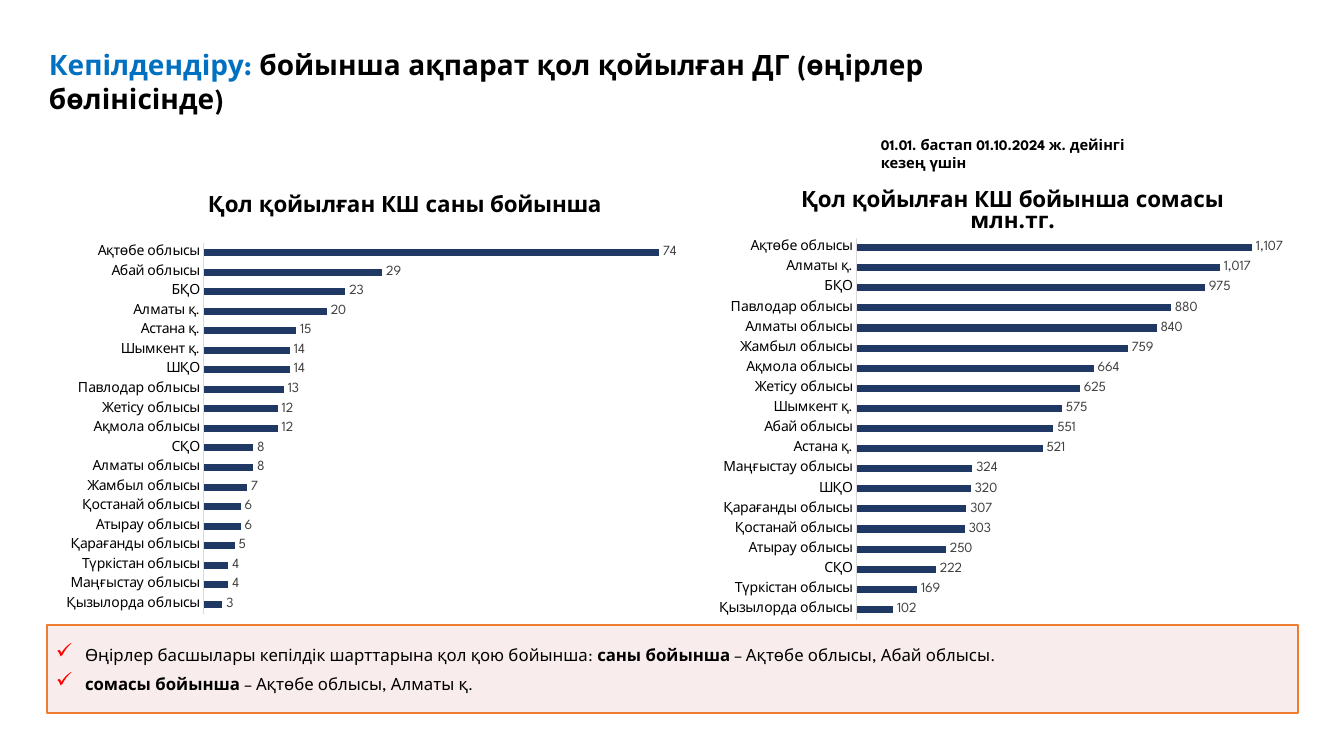
import pptx
import pptx.chart.data
import pptx.dml.color
import pptx.enum.chart
import pptx.enum.shapes
import pptx.enum.text
import pptx.oxml
import pptx.oxml.ns
import pptx.util
from lxml import etree

PX = 914400 / 100.8
FONT = "League Spartan"
COLORS = {
    "black": "000000", "blue": "0070C0", "navy": "203864", "label": "404040",
    "axis": "D9D9D9", "pink": "F2DCDB", "orange": "ED7D31", "red": "FF0000",
}
qn = pptx.oxml.ns.qn


def style_font(font, size, color, bold=None):
    font.name = FONT
    font.size = pptx.util.Pt(size)
    font.bold = bold
    font.color.rgb = pptx.dml.color.RGBColor.from_string(COLORS[color])


def set_layout(parent, index, **values):
    for old_layout in parent.findall(qn("c:layout")):
        parent.remove(old_layout)
    layout = etree.Element(qn("c:layout"))
    manual = etree.SubElement(layout, qn("c:manualLayout"))
    for tag, value in values.items():
        etree.SubElement(manual, qn(f"c:{tag}"), val=str(value))
    parent.insert(index, layout)


presentation = pptx.Presentation()
presentation.slide_width = round(1344 * PX)
presentation.slide_height = round(756 * PX)
slide = presentation.slides.add_slide(presentation.slide_layouts[6])

# Heading and period
headings = [
    ((39, 43, 921, 78), 20, [
        ("Кепілдендіру: ", "blue"),
        ("бойынша ақпарат қол қойылған ДГ (өңірлер бөлінісінде)", "black")]),
    ((871, 131, 268, 46), 10.5, [
        ("01.01. бастап 01.10.2024 ж. дейінгі кезең үшін", "black")]),
]
for box, size, pieces in headings:
    text_box = slide.shapes.add_textbox(*(round(n * PX) for n in box))
    text_box.text_frame.word_wrap = True
    paragraph = text_box.text_frame.paragraphs[0]
    for text, color in pieces:
        run = paragraph.add_run()
        run.text = text
        style_font(run.font, size, color, True)

# Summary panel
panel = slide.shapes.add_shape(
    pptx.enum.shapes.MSO_SHAPE.RECTANGLE,
    *(round(n * PX) for n in (47, 625, 1251, 88)))
panel.shadow.inherit = False
panel.fill.solid()
panel.fill.fore_color.rgb = pptx.dml.color.RGBColor.from_string(COLORS["pink"])
fill_color = panel.fill._xPr.find(".//" + qn("a:srgbClr"))
etree.SubElement(fill_color, qn("a:alpha"), val="50000")
panel.line.color.rgb = pptx.dml.color.RGBColor.from_string(COLORS["orange"])
panel.line.width = pptx.util.Pt(1)
frame = panel.text_frame
frame.word_wrap = True
frame.vertical_anchor = pptx.enum.text.MSO_ANCHOR.MIDDLE
frame.margin_left = frame.margin_right = round(8 * PX)
frame.margin_top = frame.margin_bottom = round(4 * PX)

findings = [
    [("Өңірлер басшылары кепілдік шарттарына қол қою бойынша: ", False),
     ("саны бойынша", True), (" – Ақтөбе облысы, Абай облысы.", False)],
    [("сомасы бойынша ", True), ("– Ақтөбе облысы, Алматы қ.", False)],
]
for number, pieces in enumerate(findings):
    paragraph = frame.add_paragraph() if number else frame.paragraphs[0]
    paragraph.alignment = pptx.enum.text.PP_ALIGN.LEFT
    paragraph.space_after = pptx.util.Pt(6)
    properties = paragraph._p.get_or_add_pPr()
    properties.set("marL", str(round(30 * PX)))
    properties.set("indent", str(round(-29 * PX)))
    bullet_color = etree.SubElement(properties, qn("a:buClr"))
    etree.SubElement(bullet_color, qn("a:srgbClr"), val=COLORS["red"])
    etree.SubElement(properties, qn("a:buSzPct"), val="125000")
    etree.SubElement(properties, qn("a:buChar"), char="✓")
    for text, bold in pieces:
        run = paragraph.add_run()
        run.text = text
        style_font(run.font, 12, "black", bold)

# Regional charts, values listed from the bottom bar up
charts = [
    {
        "title": "Қол қойылған КШ саны бойынша",
        "box": (53, 186, 656, 437), "maximum": 80, "format": "General",
        "title_at": (0.23, 0.01), "plot": (0.23, 0.13, 0.75, 0.85),
        "regions": [
            ("Қызылорда облысы", 3), ("Маңғыстау облысы", 4),
            ("Түркістан облысы", 4), ("Қарағанды облысы", 5),
            ("Атырау облысы", 6), ("Қостанай облысы", 6),
            ("Жамбыл облысы", 7), ("Алматы облысы", 8), ("СҚО", 8),
            ("Ақмола облысы", 12), ("Жетісу облысы", 12),
            ("Павлодар облысы", 13), ("ШҚО", 14), ("Шымкент қ.", 14),
            ("Астана қ.", 15), ("Алматы қ.", 20), ("БҚО", 23),
            ("Абай облысы", 29), ("Ақтөбе облысы", 74)],
    },
    {
        "title": "Қол қойылған КШ бойынша сомасы\vмлн.тг.",
        "box": (710, 163, 587, 466), "maximum": 1200, "format": "#,##0",
        "title_at": (0.15, 0.05), "plot": (0.25, 0.16, 0.73, 0.82),
        "regions": [
            ("Қызылорда облысы", 102), ("Түркістан облысы", 169),
            ("СҚО", 222), ("Атырау облысы", 250), ("Қостанай облысы", 303),
            ("Қарағанды облысы", 307), ("ШҚО", 320),
            ("Маңғыстау облысы", 324), ("Астана қ.", 521),
            ("Абай облысы", 551), ("Шымкент қ.", 575),
            ("Жетісу облысы", 625), ("Ақмола облысы", 664),
            ("Жамбыл облысы", 759), ("Алматы облысы", 840),
            ("Павлодар облысы", 880), ("БҚО", 975), ("Алматы қ.", 1017),
            ("Ақтөбе облысы", 1107)],
    },
]
for details in charts:
    regions, values = zip(*details["regions"])
    data = pptx.chart.data.CategoryChartData(number_format=details["format"])
    data.categories = regions
    data.add_series("Series 1", values)
    chart = slide.shapes.add_chart(
        pptx.enum.chart.XL_CHART_TYPE.BAR_CLUSTERED,
        *(round(n * PX) for n in details["box"]), data).chart
    style_font(chart.font, 10, "black")
    chart.has_legend = False

    chart.has_title = True
    title_frame = chart.chart_title.text_frame
    title_frame.text = details["title"]
    style_font(title_frame.paragraphs[0].font, 16, "black", True)
    for run in title_frame.paragraphs[0].runs:
        style_font(run.font, 16, "black", True)
    title_x, title_y = details["title_at"]
    set_layout(chart._chartSpace.find(".//" + qn("c:title")), 1,
               xMode="edge", yMode="edge", x=title_x, y=title_y)
    x, y, width, height = details["plot"]
    set_layout(chart._chartSpace.find(".//" + qn("c:plotArea")), 0,
               layoutTarget="inner", xMode="edge", yMode="edge",
               x=x, y=y, w=width, h=height)

    axis = chart.category_axis
    axis.major_tick_mark = pptx.enum.chart.XL_TICK_MARK.NONE
    axis.format.line.color.rgb = pptx.dml.color.RGBColor.from_string(COLORS["axis"])
    axis.format.line.width = pptx.util.Pt(0.75)
    style_font(axis.tick_labels.font, 10, "black")
    chart.value_axis.visible = False
    chart.value_axis.has_major_gridlines = False
    chart.value_axis.minimum_scale = 0
    chart.value_axis.maximum_scale = details["maximum"]

    plot = chart.plots[0]
    plot.gap_width = 182
    plot.vary_by_categories = False
    bars = plot.series[0].format.fill
    bars.solid()
    bars.fore_color.rgb = pptx.dml.color.RGBColor.from_string(COLORS["navy"])
    labels = plot.series[0].data_labels
    labels.show_value = True
    labels.position = pptx.enum.chart.XL_LABEL_POSITION.OUTSIDE_END
    labels.number_format = details["format"]
    labels.number_format_is_linked = False
    style_font(labels.font, 10, "label")

presentation.save("out.pptx")
